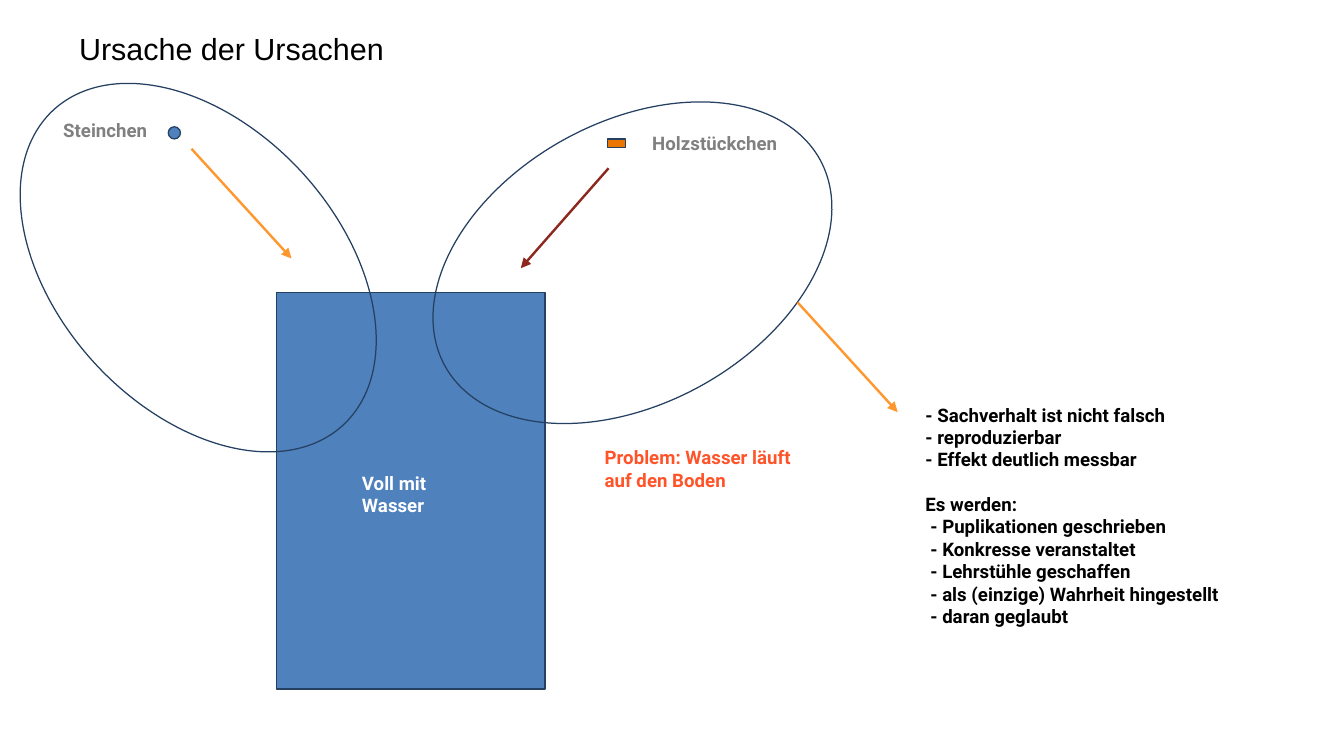
from dataclasses import dataclass

from lxml.etree import SubElement
from pptx import Presentation
from pptx.dml.color import RGBColor
from pptx.enum.shapes import MSO_CONNECTOR as Connector, MSO_SHAPE as Preset
from pptx.enum.text import PP_ALIGN as Align
from pptx.oxml.ns import qn
from pptx.slide import Slide
from pptx.util import Inches, Pt

WIDTH, HEIGHT = Inches(11.02), Inches(6.2)
OUTLINE, WATER, ORANGE, GREY = "254061", "4F81BD", "FF972F", "808080"


@dataclass
class Area:
    """Left, top, width and height in percent of the slide."""
    left: float
    top: float
    width: float
    height: float

    def lengths(self) -> tuple[int, int, int, int]:
        return across(self.left), down(self.top), across(self.width), down(self.height)


@dataclass
class Figure:
    preset: Preset
    area: Area
    fill: str | None = None
    rotation: float = 0


@dataclass
class Arrow:
    start: tuple[float, float]
    end: tuple[float, float]
    color: str


@dataclass
class Label:
    lines: list[str]
    area: Area
    color: str
    font: str = "Roboto"
    size: int = 11
    bold: bool = True
    wrap: bool = True


FIGURES = [
    # Water tank, pebble and piece of wood
    Figure(Preset.RECTANGLE, Area(20.6, 38.71, 19.96, 52.42), WATER),
    Figure(Preset.OVAL, Area(12.52, 16.77, 0.91, 1.61), WATER),
    Figure(Preset.RECTANGLE, Area(45.19, 18.39, 1.36, 1.13), "EA7500"),
    # Tilted rings around the two causes
    Figure(Preset.OVAL, Area(31.13, 16.13, 31.85, 37.26), rotation=331.2),
    Figure(Preset.OVAL, Area(-1.18, 16.77, 31.85, 37.26), rotation=227.5),
]

ARROWS = [
    Arrow((14.25, 19.68), (21.69, 34.19), ORANGE),
    Arrow((45.28, 22.26), (38.75, 35.48), "8D281E"),
    Arrow((59.35, 40), (66.79, 54.52), ORANGE),
]

LABELS = [
    Label(["Ursache der Ursachen"], Area(4.99, 3.23, 26.86, 6.13), "000000",
          font="Arial", size=18, bold=False),
    Label(["Voll mit Wasser"], Area(26.04, 61.61, 10.16, 7.26), "FFFFFF"),
    Label(["Steinchen"], Area(3.81, 15, 8.17, 4.52), GREY, wrap=False),
    Label(["Holzstückchen"], Area(47.64, 16.61, 12.07, 5), GREY, wrap=False),
    Label(["Problem: Wasser läuft auf den Boden"],
          Area(44.1, 58.23, 16.15, 7.74), "FF5429"),
]

FINDINGS = Label(
    ["- Sachverhalt ist nicht falsch", "- reproduzierbar", "- Effekt deutlich messbar"],
    Area(67.97, 52.58, 26.32, 33.23), "000000")
HEADING = "Es werden:"
CONSEQUENCES = ["- Puplikationen geschrieben", "- Konkresse veranstaltet",
                "- Lehrstühle geschaffen", "- als (einzige) Wahrheit hingestellt",
                "- daran geglaubt"]


def across(percent: float) -> int:
    return round(WIDTH * percent / 100)


def down(percent: float) -> int:
    return round(HEIGHT * percent / 100)


def rgb(color: str) -> RGBColor:
    return RGBColor.from_string(color)


def draw_figure(page: Slide, figure: Figure) -> None:
    shape = page.shapes.add_shape(figure.preset, *figure.area.lengths())
    shape.shadow.inherit = False
    shape.rotation = figure.rotation
    if figure.fill:
        shape.fill.solid()
        shape.fill.fore_color.rgb = rgb(figure.fill)
    else:
        shape.fill.background()
    shape.line.color.rgb = rgb(OUTLINE)
    shape.line.width = Pt(0)


def draw_arrow(page: Slide, arrow: Arrow) -> None:
    (left, top), (right, bottom) = arrow.start, arrow.end
    connector = page.shapes.add_connector(
        Connector.STRAIGHT, across(left), down(top), across(right), down(bottom))
    connector.line.color.rgb = rgb(arrow.color)
    connector.line.width = Pt(1.42)
    SubElement(connector.line._get_or_add_ln(), qn("a:tailEnd"), type="triangle")
    SubElement(connector._element.spPr, qn("a:effectLst"))


def draw_label(page: Slide, label: Label) -> None:
    box = page.shapes.add_textbox(*label.area.lengths())
    frame = box.text_frame
    frame.text = "\n".join(label.lines)
    frame.word_wrap = label.wrap
    for para in frame.paragraphs:
        para.alignment = Align.LEFT
        if para.text == HEADING:
            para.space_before = Pt(13.2)
        elif para.text in CONSEQUENCES:
            para._p.get_or_add_pPr().set("marL", str(Inches(0.04)))
        for span in para.runs:
            span.font.name = label.font
            span.font.size = Pt(label.size)
            span.font.bold = label.bold
            span.font.color.rgb = rgb(label.color)


def main() -> None:
    deck = Presentation()
    deck.slide_width, deck.slide_height = WIDTH, HEIGHT
    page = deck.slides.add_slide(deck.slide_layouts[6])
    for figure in FIGURES:
        draw_figure(page, figure)
    for arrow in ARROWS:
        draw_arrow(page, arrow)
    FINDINGS.lines += [HEADING, *CONSEQUENCES]
    for label in [*LABELS, FINDINGS]:
        draw_label(page, label)
    deck.save("out.pptx")


if __name__ == "__main__":
    main()
